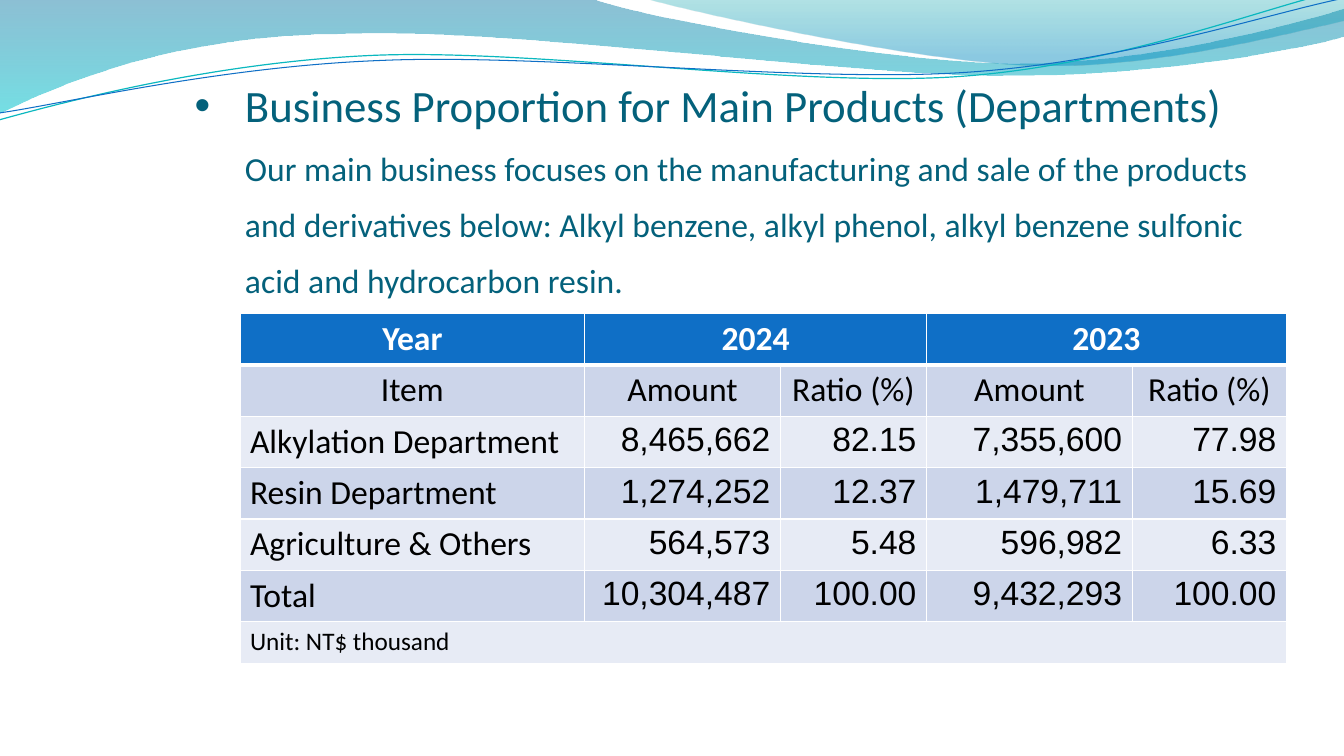
"""Build the slide on business proportion for the main products."""
import math

from lxml import etree
from pptx import Presentation
from pptx import util as u
from pptx.dml.color import RGBColor
from pptx.enum import text
from pptx.oxml.ns import qn

COLORS = {"title": "04617B", "header": "0F6FC6", "dark band": "CCD5EA",
          "light band": "E7EBF5", "white": "FFFFFF", "black": "000000",
          "deep blue": "0074A1", "cyan": "00C6CF", "teal": "00A1A9",
          "sky": "008BBF", "teal line": "0AB8BF", "blue line": "0F6FC6"}
FONT, NUMBER_FONT = "Calibri", "Arial"

HEADING = "Business Proportion for Main Products (Departments)"
SUMMARY = ("Our main business focuses on the manufacturing and sale of the products "
           "and derivatives below: Alkyl benzene, alkyl phenol, alkyl benzene sulfonic "
           "acid and hydrocarbon resin.")

ROWS = [
    ("Year", "2024", "", "2023", ""),
    ("Item", "Amount", "Ratio (%)", "Amount", "Ratio (%)"),
    ("Alkylation Department", "8,465,662", "82.15", "7,355,600", "77.98"),
    ("Resin Department", "1,274,252", "12.37", "1,479,711", "15.69"),
    ("Agriculture & Others", "564,573", "5.48", "596,982", "6.33"),
    ("Total", "10,304,487", "100.00", "9,432,293", "100.00"),
    ("Unit: NT$ thousand", "", "", "", ""),
]
COLUMN_WIDTHS = (3.42, 1.94, 1.45, 2.04, 1.53)
ROW_HEIGHTS = (0.51,) * 6 + (0.41,)
MERGES = [((0, 1), (0, 2)), ((0, 3), (0, 4)), ((6, 0), (6, 4))]

BANDS = [
    {"path": [(0, -0.01), (5.87, -0.01),
              (6.34, 0.17, 8.85, 0.63, 10.11, 0.63),
              (11.38, 0.63, 12.78, 0.26, 13.33, 0.09), (13.35, 0.36),
              (13.11, 0.44, 11.6, 0.76, 9.94, 0.75),
              (8.29, 0.75, 5.09, 0.28, 3.43, 0.34),
              (1.72, 0.35, 0.61, 0.83, -0.01, 1.13)],
     "stops": [(0, "deep blue", 45), (1, "cyan", 55)]},
    {"path": [(6.39, -0.01),
              (6.79, 0.11, 9.09, 0.62, 10.25, 0.65),
              (11.41, 0.69, 12.82, 0.32, 13.33, 0.21), (13.33, 0)],
     "stops": [(0, "teal", 30), (0.8, "sky", 45)]},
]
STRANDS = [
    {"path": [(-0.01, 1.19), (0.64, 1.01, 2.11, 0.62, 3.69, 0.55),
              (5.27, 0.48, 7.9, 0.87, 9.5, 0.76),
              (11.1, 0.65, 12.52, 0.08, 13.31, -0.1)],
     "center": (6.65, 0.58), "color": "teal line", "width": 0.85},
    {"path": [(0, 1.12), (0.63, 1.03, 2.18, 0.66, 3.78, 0.6),
              (5.37, 0.53, 7.96, 0.82, 9.55, 0.72),
              (11.15, 0.62, 12.55, 0.14, 13.34, -0.02)],
     "center": (6.67, 0.59), "color": "blue line", "width": 0.75},
]
STRAND_TILT = 2.7


def rgb(name):
    return RGBColor.from_string(COLORS[name])


def add_wave(slide, path, close):
    points = [(u.Inches(x), u.Inches(y)) for segment in path
              for x, y in zip(segment[::2], segment[1::2])]
    builder = slide.shapes.build_freeform(*points[0])
    builder.add_line_segments(points[1:], close=close)
    wave = builder.convert_to_shape()
    wave.shadow.inherit = False
    steps = iter(list(wave._element.iter(qn("a:lnTo"))))
    for segment in path[1:]:
        step = next(steps)
        if len(segment) == 6:
            curve = etree.Element(qn("a:cubicBezTo"))
            step.addprevious(curve)
            for corner in (step, next(steps), next(steps)):
                curve.append(corner[0])
                corner.getparent().remove(corner)
    return wave


def add_band(slide, path, stops):
    band = add_wave(slide, path, True)
    band.line.fill.background()
    band.fill.gradient()
    band.fill.gradient_angle = 270
    for stop, (position, color, _) in zip(band.fill.gradient_stops, stops):
        stop.position = position
        stop.color.rgb = rgb(color)
    for tint, (_, _, opacity) in zip(band._element.spPr.iter(qn("a:srgbClr")), stops):
        etree.SubElement(tint, qn("a:alpha"), val=str(opacity * 1000))


def turn(segment, center, degrees):
    cosine, sine = math.cos(math.radians(degrees)), math.sin(math.radians(degrees))
    turned = []
    for x, y in zip(segment[::2], segment[1::2]):
        dx, dy = x - center[0], y - center[1]
        turned += [center[0] + dx * cosine - dy * sine, center[1] + dx * sine + dy * cosine]
    return turned


def add_strand(slide, path, center, color, width):
    level_path = [turn(segment, center, STRAND_TILT) for segment in path]
    strand = add_wave(slide, level_path, False)
    strand.rotation = -STRAND_TILT
    strand.fill.background()
    strand.line.color.rgb = rgb(color)
    strand.line.width = u.Pt(width)


def style_font(font, size, color, name=FONT, bold=False):
    font.size, font.name, font.bold = u.Pt(size), name, bold
    font.color.rgb = rgb(color)


def add_title(slide):
    title = slide.shapes.add_textbox(*map(u.Inches, (1.93, 0.17, 10.65, 3.34)))
    frame = title.text_frame
    frame.word_wrap = True
    frame.vertical_anchor = text.MSO_ANCHOR.MIDDLE
    frame.margin_left = frame.margin_right = frame.margin_bottom = 0
    frame.margin_top = u.Inches(0.05)
    frame.text = HEADING + "\v" + SUMMARY
    paragraph = frame.paragraphs[0]
    paragraph.line_spacing = u.Pt(40)
    indents = paragraph._p.get_or_add_pPr()
    indents.set("marL", str(u.Inches(0.5)))
    indents.set("indent", str(-u.Inches(0.5)))
    etree.SubElement(indents, qn("a:buFont"), typeface="Arial")
    etree.SubElement(indents, qn("a:buChar"), char="•")
    for run, size in zip(paragraph.runs, (32, 24)):
        style_font(run.font, size, "title")


def add_borders(cell, row):
    widths = {"lnL": 1, "lnR": 1, "lnT": 3 if row == 1 else 1, "lnB": 3 if row == 0 else 1}
    properties = cell._tc.get_or_add_tcPr()
    for index, (side, width) in enumerate(widths.items()):
        border = etree.Element(qn("a:" + side), w=str(u.Pt(width)))
        fill = etree.SubElement(border, qn("a:solidFill"))
        etree.SubElement(fill, qn("a:srgbClr"), val=COLORS["white"])
        properties.insert(index, border)


def add_proportions(slide):
    proportions = slide.shapes.add_table(
        len(ROWS), len(COLUMN_WIDTHS), u.Inches(2.38), u.Inches(3.11),
        u.Inches(sum(COLUMN_WIDTHS)), u.Inches(sum(ROW_HEIGHTS))).table
    for column, width in zip(proportions.columns, COLUMN_WIDTHS):
        column.width = u.Inches(width)
    for row, height in zip(proportions.rows, ROW_HEIGHTS):
        row.height = u.Inches(height)
    for first, last in MERGES:
        proportions.cell(*first).merge(proportions.cell(*last))
    for r, row in enumerate(ROWS):
        band = "header" if r == 0 else "dark band" if r % 2 else "light band"
        for c, value in enumerate(row):
            cell = proportions.cell(r, c)
            cell.fill.solid()
            cell.fill.fore_color.rgb = rgb(band)
            add_borders(cell, r)
            if not value:
                continue
            cell.text_frame.text = value
            paragraph = cell.text_frame.paragraphs[0]
            is_number = r > 1 and c > 0
            paragraph.alignment = (text.PP_ALIGN.CENTER if r < 2 else
                                   text.PP_ALIGN.RIGHT if is_number else text.PP_ALIGN.LEFT)
            style_font(paragraph.runs[0].font, 18 if r == len(ROWS) - 1 else 24,
                       "white" if r == 0 else "black",
                       NUMBER_FONT if is_number else FONT, r == 0)


def main():
    deck = Presentation()
    deck.slide_width, deck.slide_height = u.Inches(13.33), u.Inches(7.5)
    slide = deck.slides.add_slide(deck.slide_layouts[6])
    for band in BANDS:
        add_band(slide, **band)
    for strand in STRANDS:
        add_strand(slide, **strand)
    add_title(slide)
    add_proportions(slide)
    deck.save("out.pptx")


if __name__ == "__main__":
    main()
